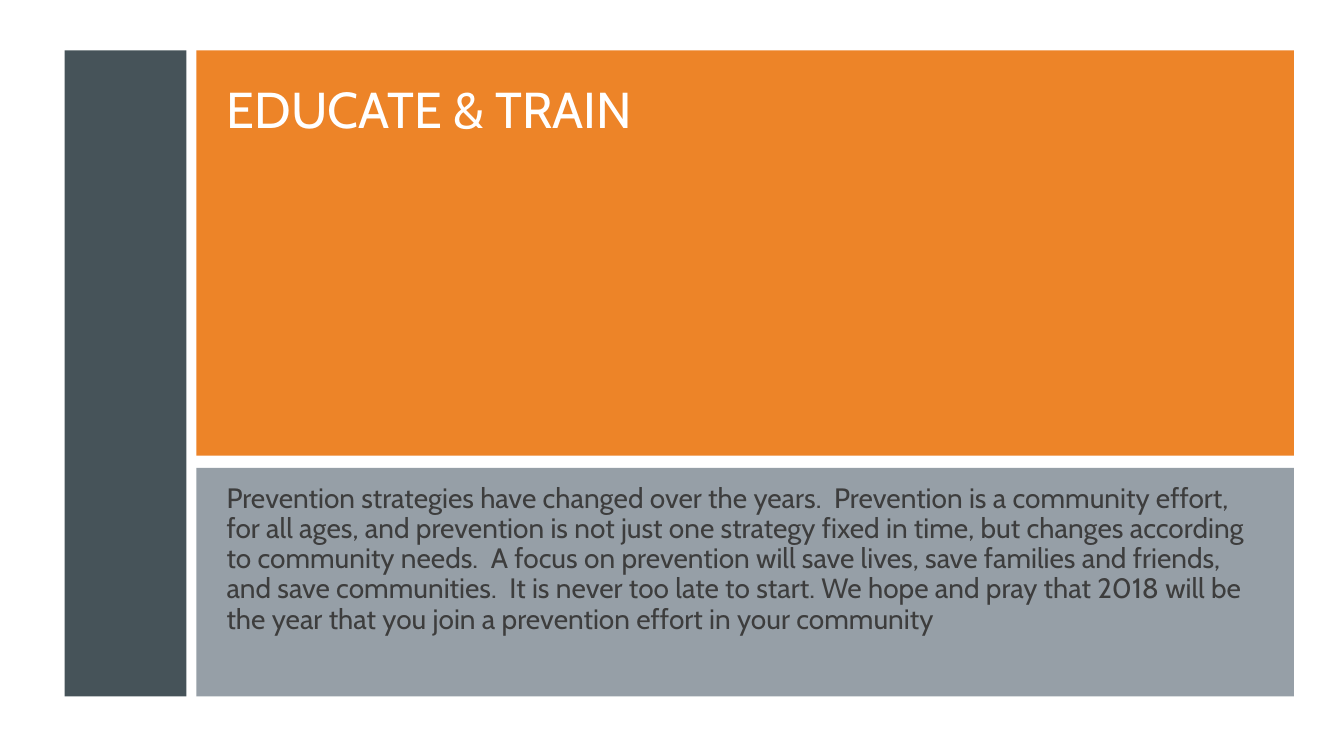
import pptx
import pptx.dml.color
import pptx.enum.shapes
import pptx.enum.text
import pptx.util

Cm = pptx.util.Cm
Pt = pptx.util.Pt

TITLE = "EDUCATE & TRAIN"
MESSAGE = (
    "Prevention strategies have changed over the years.  "
    "Prevention is a community effort, for all ages, and prevention is not "
    "just one strategy fixed in time, but changes according to community needs.  "
    "A focus on prevention will save lives, save families and friends, "
    "and save communities.  It is never too late to start. "
    "We hope and pray that 2018 will be the year that you join "
    "a prevention effort in your community"
)


def color(hex_code):
    return pptx.dml.color.RGBColor.from_string(hex_code)


def add_panel(slide, left, top, width, height, fill):
    panel = slide.shapes.add_shape(
        pptx.enum.shapes.MSO_SHAPE.RECTANGLE,
        Cm(left), Cm(top), Cm(width), Cm(height))
    panel.shadow.inherit = False
    panel.fill.solid()
    panel.fill.fore_color.rgb = color(fill)
    panel.line.fill.background()


def place(box, left, top, width, height):
    box.left, box.top = Cm(left), Cm(top)
    box.width, box.height = Cm(width), Cm(height)


def write(box, text, size, text_color):
    frame = box.text_frame
    frame.word_wrap = True
    frame.auto_size = pptx.enum.text.MSO_AUTO_SIZE.NONE
    frame.vertical_anchor = pptx.enum.text.MSO_ANCHOR.TOP
    paragraph = frame.paragraphs[0]
    paragraph.alignment = pptx.enum.text.PP_ALIGN.LEFT
    run = paragraph.add_run()
    run.text = text
    run.font.name = "Cabin"
    run.font.size = Pt(size)
    run.font.color.rgb = color(text_color)
    return paragraph


def main():
    deck = pptx.Presentation()
    deck.slide_width, deck.slide_height = Cm(33.87), Cm(19.05)
    slide = deck.slides.add_slide(deck.slide_layouts[5])
    slide.background.fill.solid()
    slide.background.fill.fore_color.rgb = color("FFFFFF")

    # Colour panels
    add_panel(slide, 4.95, 1.27, 27.66, 10.21, "ED8428")
    add_panel(slide, 1.63, 1.27, 3.07, 16.28, "465359")
    add_panel(slide, 4.95, 11.79, 27.66, 5.76, "969FA7")

    # Title, brought in front of the panels
    heading = slide.shapes.title
    heading.element.getparent().append(heading.element)
    place(heading, 5.46, 1.85, 21.03, 9.25)
    write(heading, TITLE, 36, "FFFFFF")

    # Message
    message = slide.shapes.add_textbox(Cm(5.46), Cm(12.07), Cm(26.34), Cm(5.46))
    paragraph = write(message, MESSAGE, 20, "3D3D3D")
    paragraph.line_spacing = 0.9
    paragraph.space_before = Pt(4)
    paragraph.space_after = Pt(6)

    deck.save("out.pptx")


if __name__ == "__main__":
    main()
